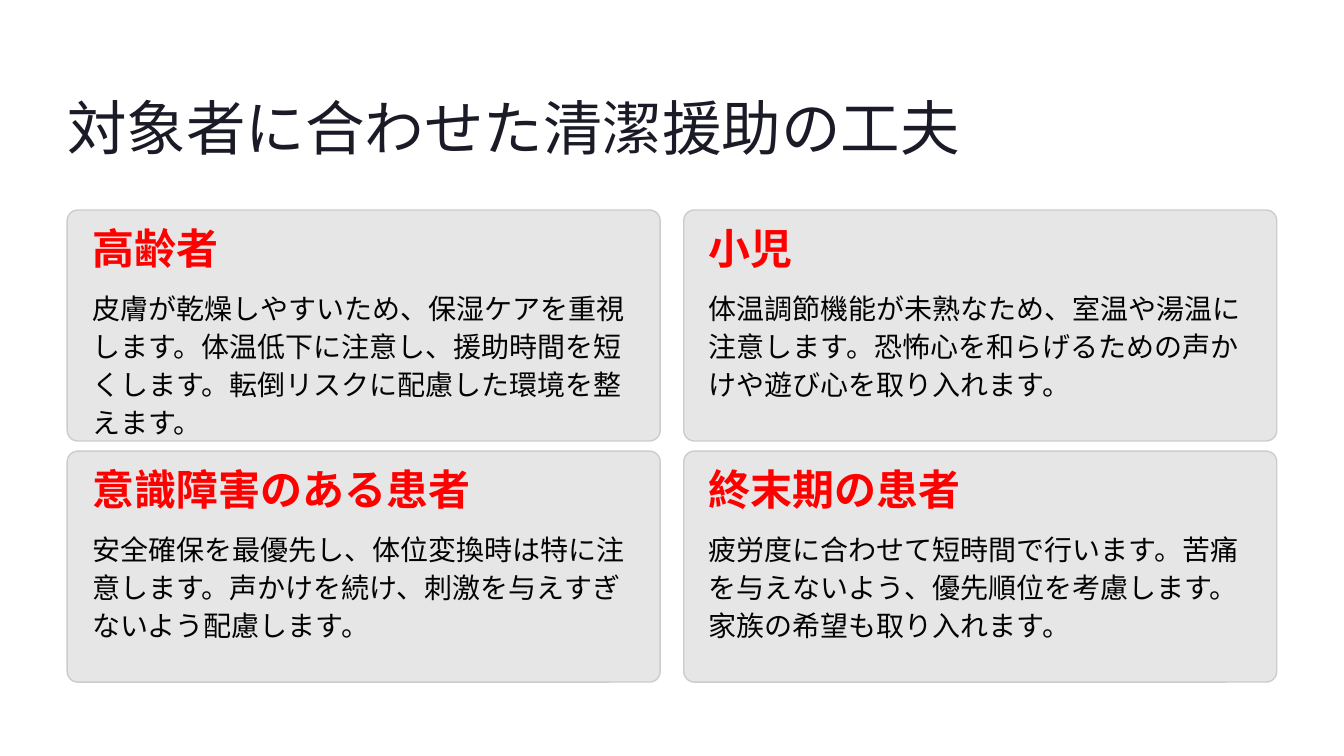
import pptx
import pptx.util
import pptx.dml.color
import pptx.enum.shapes
import pptx.enum.text

Inches = pptx.util.Inches
Pt = pptx.util.Pt
RGBColor = pptx.dml.color.RGBColor

INK = RGBColor(0x1B, 0x1B, 0x27)
RED = RGBColor(0xFF, 0x00, 0x00)
BODY = RGBColor(0x03, 0x03, 0x03)
CARD = RGBColor(0xE6, 0xE6, 0xE6)
BORDER = RGBColor(0xCC, 0xCC, 0xCC)

CARDS = [
    ("高齢者", "皮膚が乾燥しやすいため、保湿ケアを重視します。体温低下に注意し、援助時間を短くします。転倒リスクに配慮した環境を整えます。"),
    ("小児", "体温調節機能が未熟なため、室温や湯温に注意します。恐怖心を和らげるための声かけや遊び心を取り入れます。"),
    ("意識障害のある患者", "安全確保を最優先し、体位変換時は特に注意します。声かけを続け、刺激を与えすぎないよう配慮します。"),
    ("終末期の患者", "疲労度に合わせて短時間で行います。苦痛を与えないよう、優先順位を考慮します。家族の希望も取り入れます。"),
]
LEFT, TOP = 0.8, 2.5
CARD_W, CARD_H = 7.06, 2.75
STEP_X, STEP_Y = 7.34, 2.87
PAD = 0.3


def write(sp, text, font, size, color, spacing, bold=False, wrap=False):
    tf = sp.text_frame
    tf.margin_left = tf.margin_right = tf.margin_top = tf.margin_bottom = 0
    tf.auto_size = pptx.enum.text.MSO_AUTO_SIZE.NONE
    tf.vertical_anchor = pptx.enum.text.MSO_ANCHOR.TOP
    tf.word_wrap = wrap
    p = tf.paragraphs[0]
    p.alignment = pptx.enum.text.PP_ALIGN.LEFT
    p.line_spacing = Pt(spacing)
    p.space_before = Pt(0)
    r = p.add_run()
    r.text = text
    r.font.name = font
    r.font.size = Pt(size)
    r.font.bold = bold
    r.font.color.rgb = color


prs = pptx.Presentation()
prs.slide_width, prs.slide_height = Inches(16), Inches(9)
slide = prs.slides.add_slide(prs.slide_layouts[5])

# Title
title = slide.shapes.title
title.left, title.top = Inches(LEFT), Inches(1.04)
title.width, title.height = Inches(10.69), Inches(0.89)
write(title, "対象者に合わせた清潔援助の工夫", "Inter", 51, INK, 64)

# Two by two grid of cards
for i, (heading, body) in enumerate(CARDS):
    x = LEFT + i % 2 * STEP_X
    y = TOP + i // 2 * STEP_Y
    sp = slide.shapes.add_shape(
        pptx.enum.shapes.MSO_SHAPE.ROUNDED_RECTANGLE,
        Inches(x), Inches(y), Inches(CARD_W), Inches(CARD_H))
    sp.adjustments[0] = 0.046
    sp.shadow.inherit = False
    sp.fill.solid()
    sp.fill.fore_color.rgb = CARD
    sp.line.color.rgb = BORDER
    sp.line.width = Pt(1.2)

    # Heading and body text
    tb = slide.shapes.add_textbox(
        Inches(x + PAD), Inches(y + PAD), Inches(3.56), Inches(0.45))
    write(tb, heading, "Inter", 36, RED, 32, bold=True)
    tb = slide.shapes.add_textbox(
        Inches(x + PAD), Inches(y + 0.92), Inches(CARD_W - 2 * PAD), Inches(1.37))
    write(tb, body, "Karla", 24, BODY, 32.5, wrap=True)

prs.save("out.pptx")
